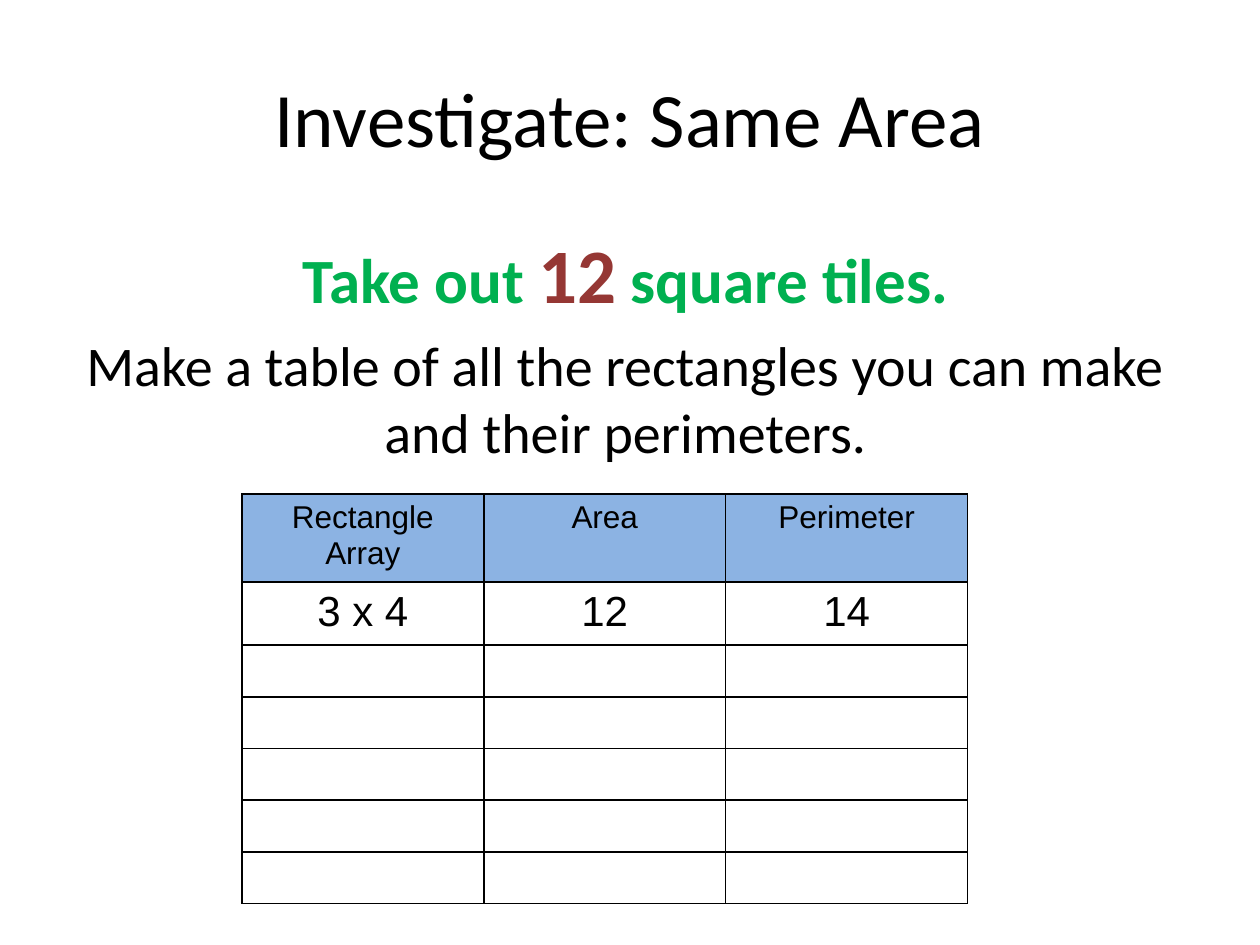
from lxml import etree
from pptx import Presentation, util as u
from pptx.dml.color import RGBColor
from pptx.enum import text
from pptx.oxml.ns import qn

THEME = {
    "ink": "000000", "green": "00B050", "red": "953734", "header": "8CB3E3",
    "heading": "Calibri", "table": "Arial",
    "title": 44, "number": 44, "task": 36, "body": 32, "label": 18, "value": 24,
}
WIDTH, HEIGHT = u.Inches(10), u.Inches(7.5)


def write(para, words, font, size, color, bold=False):
    para.alignment = text.PP_ALIGN.CENTER
    span = para.add_run()
    span.text = words
    span.font.color.rgb = RGBColor.from_string(THEME[color])
    values = {"name": THEME[font], "size": u.Pt(THEME[size]), "bold": bold}
    for name, value in values.items():
        setattr(span.font, name, value)


def add_frame(page, left, top, width, height, anchor):
    """Add a wrapping text box, placed in inches, and return its text frame."""
    box = page.shapes.add_textbox(*map(u.Inches, (left, top, width, height)))
    box.text_frame.word_wrap = True
    box.text_frame.vertical_anchor = anchor
    return box.text_frame


deck = Presentation()
deck.slide_width, deck.slide_height = WIDTH, HEIGHT
page = deck.slides.add_slide(deck.slide_layouts[6])

title = add_frame(page, 0.5, 0.3, 9, 1.25, text.MSO_ANCHOR.MIDDLE)
write(title.paragraphs[0], "Investigate: Same Area", "heading", "title", "ink")

body = add_frame(page, 0.58, 1.75, 9, 4.95, text.MSO_ANCHOR.TOP)
task = body.paragraphs[0]
for words, size, color in [
    ("Take out ", "task", "green"),
    ("12", "number", "red"),
    (" square tiles.", "task", "green"),
]:
    write(task, words, "heading", size, color, bold=True)
# A right indent sets the line slightly left of centre.
task._p.get_or_add_pPr().set("marR", str(u.Inches(0.23)))

instruction = body.add_paragraph()
instruction.space_before = u.Pt(6.4)
write(instruction, "Make a table of all the rectangles you can make and their perimeters.",
      "heading", "body", "ink")

rows = [["Rectangle Array", "Area", "Perimeter"], ["3 x 4", "12", "14"]]
rows += [[""] * 3 for _ in range(5)]
column_width, header_height, row_height = map(u.Inches, (1.92, 0.45, 0.41))
grid = page.shapes.add_table(
    len(rows), 3, u.Inches(1.92), u.Inches(3.92),
    3 * column_width, header_height + 6 * row_height).table
grid.first_row = grid.horz_banding = False
for column in grid.columns:
    column.width = column_width

for r, row in enumerate(rows):
    grid.rows[r].height = row_height if r else header_height
    for c, words in enumerate(row):
        cell = grid.cell(r, c)
        properties = cell._tc.get_or_add_tcPr()
        for side in ("a:lnL", "a:lnR", "a:lnT", "a:lnB"):
            line = etree.SubElement(properties, qn(side), w=str(u.Pt(1)))
            fill = etree.SubElement(line, qn("a:solidFill"))
            etree.SubElement(fill, qn("a:srgbClr"), val=THEME["ink"])
        if r == 0:
            cell.fill.solid()
            cell.fill.fore_color.rgb = RGBColor.from_string(THEME["header"])
        else:
            cell.fill.background()
        if words:
            write(cell.text_frame.paragraphs[0], words, "table", "value" if r else "label", "ink")

deck.save("out.pptx")
